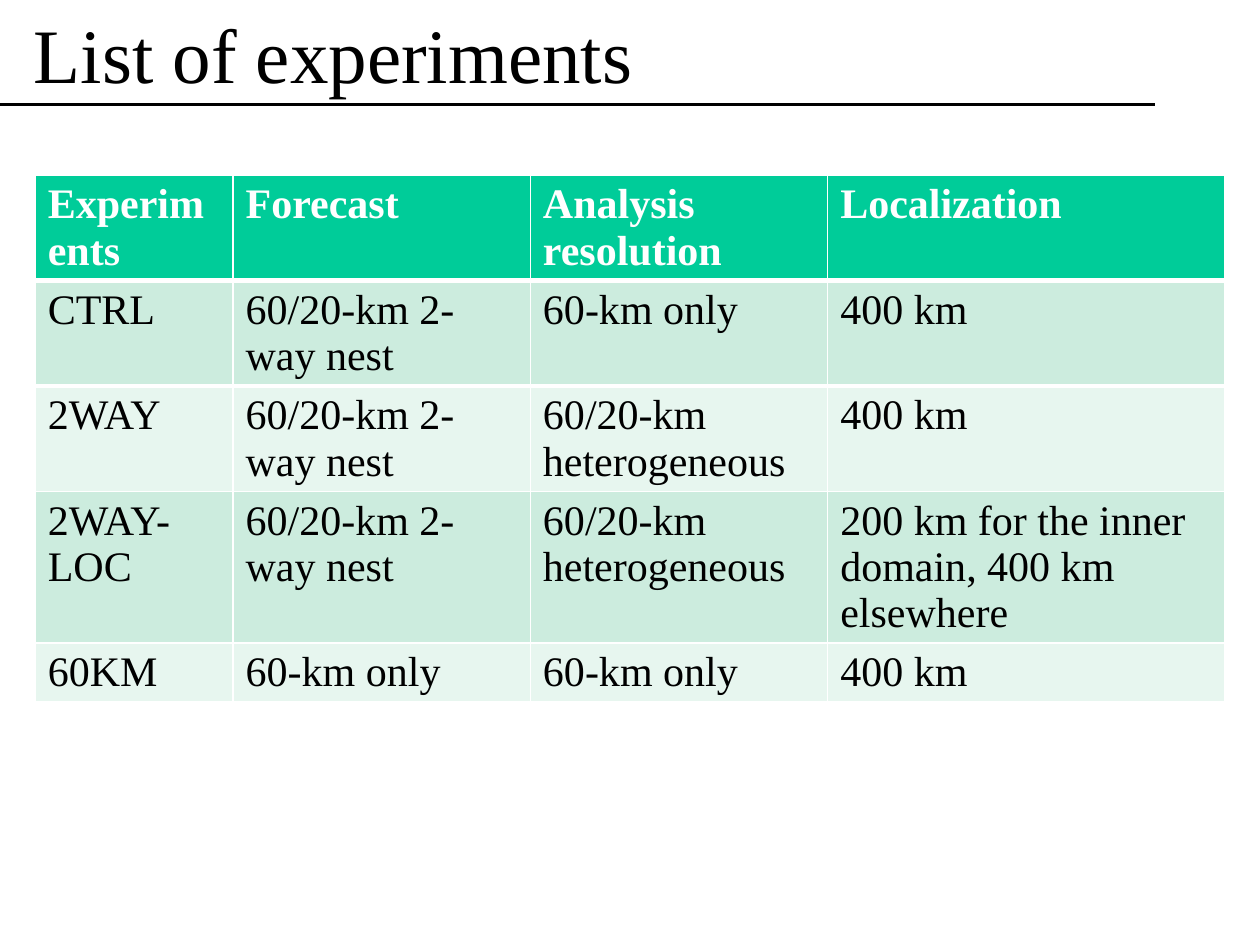
import pptx
import pptx.dml.color
import pptx.enum.shapes
import pptx.enum.text
import pptx.oxml.ns
import pptx.util
from lxml import etree

Inches = pptx.util.Inches
Pt = pptx.util.Pt
RGBColor = pptx.dml.color.RGBColor
qn = pptx.oxml.ns.qn

FONT = "Times New Roman"
BLACK = RGBColor(0x00, 0x00, 0x00)
WHITE = RGBColor(0xFF, 0xFF, 0xFF)
HEADER_GREEN = RGBColor(0x00, 0xCC, 0x99)
BANDS = [RGBColor(0xCC, 0xEC, 0xDE), RGBColor(0xE7, 0xF6, 0xEF)]

COLUMN_WIDTHS = [1.57, 2.36, 2.36, 3.15]
ROW_HEIGHT = 0.41
LINE_SPACING = 26.5
EXPERIMENTS = [
    ["Experiments", "Forecast", "Analysis resolution", "Localization"],
    ["CTRL", "60/20-km 2-way nest", "60-km only", "400 km"],
    ["2WAY", "60/20-km 2-way nest", "60/20-km heterogeneous", "400 km"],
    ["2WAY-LOC", "60/20-km 2-way nest", "60/20-km heterogeneous",
     "200 km for the inner domain, 400 km elsewhere"],
    ["60KM", "60-km only", "60-km only", "400 km"],
]


def format_text(tf, size, color, bold=False):
    for p in tf.paragraphs:
        for r in p.runs:
            r.font.name = FONT
            r.font.size = Pt(size)
            r.font.bold = bold
            r.font.color.rgb = color


def add_rule(s, x1, x2, y):
    line = s.shapes.add_connector(
        pptx.enum.shapes.MSO_CONNECTOR.STRAIGHT,
        Inches(x1), Inches(y), Inches(x2), Inches(y))
    line.line.color.rgb = BLACK
    line.line.width = Pt(2)
    etree.SubElement(line._element.spPr, qn("a:effectLst"))


def add_title(s, text):
    sp = s.shapes.add_textbox(Inches(0.17), 0, Inches(9), Inches(0.83))
    tf = sp.text_frame
    tf.word_wrap = True
    tf.vertical_anchor = pptx.enum.text.MSO_ANCHOR.MIDDLE
    tf.text = text
    format_text(tf, 44, BLACK)


def set_border(cell, side, width):
    # Borders must come before the fill in the cell properties
    tc_pr = cell._tc.get_or_add_tcPr()
    ln = etree.Element(qn(f"a:{side}"), w=str(Pt(width)))
    fill = etree.SubElement(ln, qn("a:solidFill"))
    etree.SubElement(fill, qn("a:srgbClr"), val=str(WHITE))
    tc_pr.insert(0, ln)


def add_table(s, rows, left, top):
    table = s.shapes.add_table(
        len(rows), len(COLUMN_WIDTHS), Inches(left), Inches(top),
        Inches(sum(COLUMN_WIDTHS)), Inches(ROW_HEIGHT * len(rows))).table
    for column, width in zip(table.columns, COLUMN_WIDTHS):
        column.width = Inches(width)
    for i, row in enumerate(rows):
        header = i == 0
        table.rows[i].height = Inches(ROW_HEIGHT)
        for j, text in enumerate(row):
            cell = table.cell(i, j)
            cell.fill.solid()
            cell.fill.fore_color.rgb = HEADER_GREEN if header else BANDS[(i - 1) % 2]
            cell.text_frame.text = text
            cell.text_frame.paragraphs[0].line_spacing = Pt(LINE_SPACING)
            format_text(cell.text_frame, 24, WHITE if header else BLACK, header)
            # Thick line between header and body
            if header:
                set_border(cell, "lnB", 3)
            elif i == 1:
                set_border(cell, "lnT", 3)


def main():
    prs = pptx.Presentation()
    prs.slide_width, prs.slide_height = Inches(10), Inches(7.5)
    s = prs.slides.add_slide(prs.slide_layouts[6])

    # Heading with the rule below it
    add_rule(s, 0, 9.17, 0.83)
    add_title(s, "List of experiments")

    # Experiment settings
    add_table(s, EXPERIMENTS, 0.28, 1.39)

    prs.save("out.pptx")


if __name__ == "__main__":
    main()
